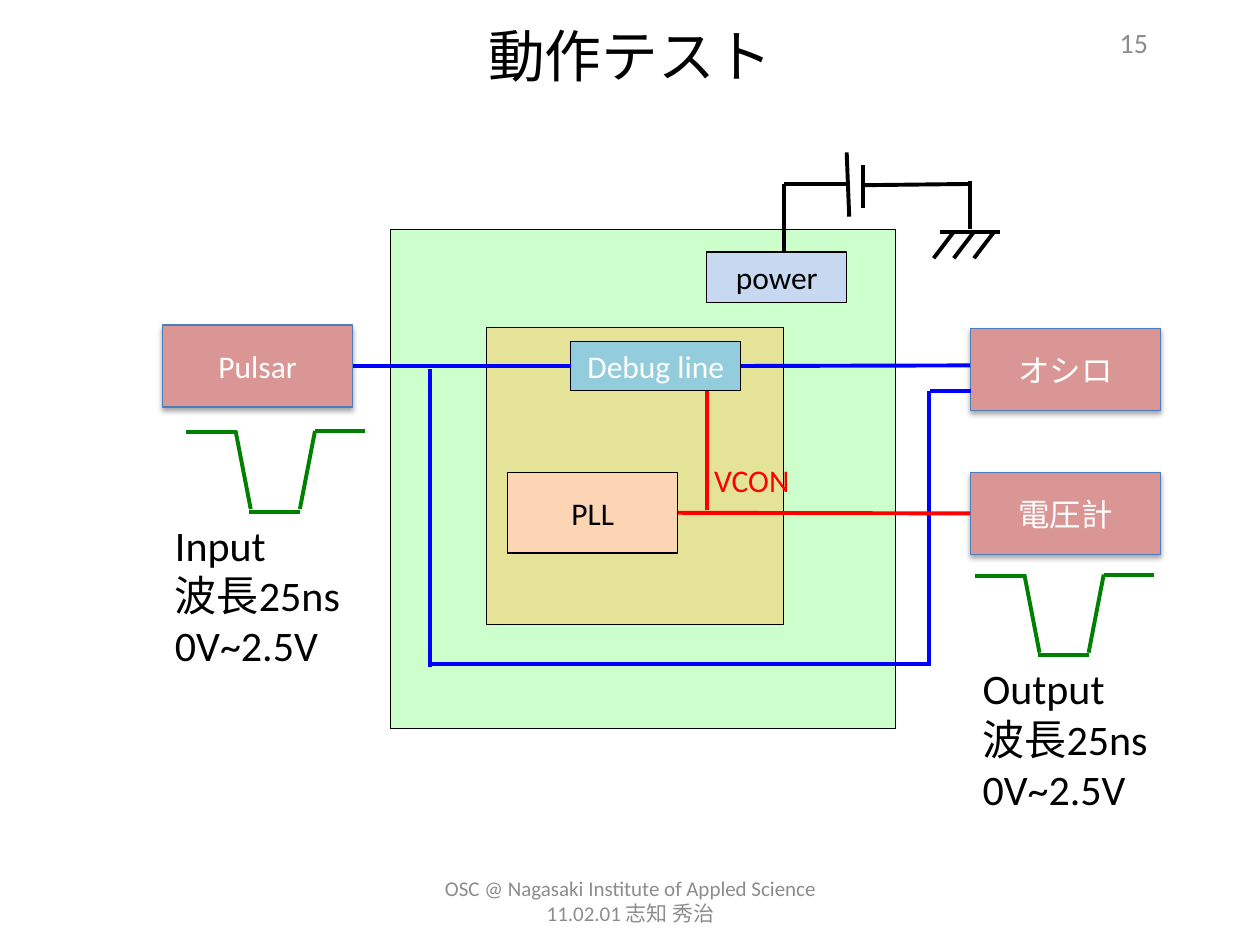
from typing import NamedTuple, Optional

from lxml import etree
from pptx import Presentation
from pptx.dml.color import RGBColor
from pptx.enum.shapes import MSO_CONNECTOR, MSO_SHAPE
from pptx.enum.text import MSO_ANCHOR, PP_ALIGN
from pptx.oxml.ns import qn
from pptx.util import Inches, Pt

RECTANGLE = MSO_SHAPE.RECTANGLE
STRAIGHT = MSO_CONNECTOR.STRAIGHT
TOP, MIDDLE = MSO_ANCHOR.TOP, MSO_ANCHOR.MIDDLE
LEFT, CENTER, RIGHT = PP_ALIGN.LEFT, PP_ALIGN.CENTER, PP_ALIGN.RIGHT
LEFT_SIDE, RIGHT_SIDE = 1, 3

FONT = "Calibri"
BLACK, WHITE, GRAY = "000000", "FFFFFF", "8C8C8C"
BLUE, RED, GREEN = "0000FF", "FF0000", "008000"


class Block(NamedTuple):
    left: float
    top: float
    width: float
    height: float
    fill: str
    label: str = ""
    label_color: str = BLACK
    outline: str = BLACK
    raised: bool = False


class Label(NamedTuple):
    left: float
    top: float
    width: float
    height: float
    lines: tuple[str, ...]
    size: float
    color: str = BLACK
    align: PP_ALIGN = LEFT
    anchor: MSO_ANCHOR = TOP
    wrap: bool = True


class Wire(NamedTuple):
    x1: float
    y1: float
    x2: float
    y2: float


def rgb(color: str) -> RGBColor:
    return RGBColor.from_string(color)


def write(frame, lines: tuple[str, ...], size: float, color: str, align: PP_ALIGN) -> None:
    for index, line in enumerate(lines):
        paragraph = frame.paragraphs[0] if index == 0 else frame.add_paragraph()
        paragraph.alignment = align
        run = paragraph.add_run()
        run.text = line
        run.font.name = FONT
        run.font.size = Pt(size)
        run.font.color.rgb = rgb(color)


def add_drop_shadow(shape) -> None:
    effects = shape._element.spPr.find(qn("a:effectLst"))
    shadow = etree.SubElement(
        effects, qn("a:outerShdw"), blurRad=str(Pt(3.1)), dist=str(Pt(1.8)),
        dir="5400000", rotWithShape="0")
    tint = etree.SubElement(shadow, qn("a:srgbClr"), val=BLACK)
    etree.SubElement(tint, qn("a:alpha"), val="35000")


def draw_block(slide, block: Block):
    shape = slide.shapes.add_shape(
        RECTANGLE, Inches(block.left), Inches(block.top),
        Inches(block.width), Inches(block.height))
    shape.shadow.inherit = False
    shape.fill.solid()
    shape.fill.fore_color.rgb = rgb(block.fill)
    shape.line.color.rgb = rgb(block.outline)
    shape.line.width = Pt(0.75)
    if block.raised:
        add_drop_shadow(shape)
    if block.label:
        shape.text_frame.vertical_anchor = MIDDLE
        write(shape.text_frame, (block.label,), 18, block.label_color, CENTER)
    return shape


def draw_label(slide, label: Label) -> None:
    box = slide.shapes.add_textbox(
        Inches(label.left), Inches(label.top), Inches(label.width), Inches(label.height))
    box.text_frame.word_wrap = label.wrap
    box.text_frame.vertical_anchor = label.anchor
    write(box.text_frame, label.lines, label.size, label.color, label.align)


def draw_wire(slide, wire: Wire, color: str, source: Optional[object] = None,
              target: Optional[object] = None) -> None:
    connector = slide.shapes.add_connector(
        STRAIGHT, Inches(wire.x1), Inches(wire.y1), Inches(wire.x2), Inches(wire.y2))
    connector.line.color.rgb = rgb(color)
    connector.line.width = Pt(2.25)
    etree.SubElement(connector._element.spPr, qn("a:effectLst"))
    if source is not None:
        connector.begin_connect(source, RIGHT_SIDE)
    if target is not None:
        connector.end_connect(target, LEFT_SIDE)


def draw_pulse(slide, left: float, top: float) -> None:
    for x1, y1, x2, y2 in PULSE:
        draw_wire(slide, Wire(left + x1, top + y1, left + x2, top + y2), GREEN)


def instrument(left: float, top: float, name: str) -> Block:
    return Block(left, top, 1.51, 0.65, "D99694", name, WHITE, "4B7EBC", True)


def signal_note(left: float, top: float, name: str) -> Label:
    return Label(left, top, 1.51, 1.31, (name, "波長25ns", "0V~2.5V"), 24)


BOARD = Block(3.1, 1.82, 4.01, 3.96, "CCFFCC")
CHIP = Block(3.86, 2.6, 2.36, 2.36, "E4E398")
DEBUG_LINE = Block(4.53, 2.71, 1.35, 0.39, "93CDDD", "Debug line", WHITE)
PLL = Block(4.03, 3.75, 1.35, 0.64, "FCD5B5", "PLL")
POWER = Block(5.61, 2, 1.11, 0.4, "C6D9F1", "power")
PULSAR = instrument(1.29, 2.58, "Pulsar")
OSCILLOSCOPE = instrument(7.7, 2.61, "オシロ")
VOLTMETER = instrument(7.7, 3.75, "電圧計")

BYPASS = (
    Wire(3.41, 2.93, 3.41, 5.29),
    Wire(3.41, 5.27, 7.39, 5.27),
    Wire(7.37, 5.27, 7.37, 3.1),
    Wire(7.38, 3.1, 7.71, 3.1),
)
BATTERY_AND_GROUND = (
    Wire(6.22, 2, 6.22, 1.46),
    Wire(6.22, 1.46, 6.72, 1.46),
    Wire(6.72, 1.21, 6.74, 1.72),
    Wire(6.85, 1.31, 6.85, 1.65),
    Wire(6.86, 1.47, 7.7, 1.46),
    Wire(7.7, 1.44, 7.7, 1.82),
    Wire(7.46, 1.84, 7.94, 1.84),
    *(Wire(x, 1.84, x - 0.16, 2.05) for x in (7.57, 7.73, 7.89)),
)
PULSE = (
    Wire(0, 0.01, 0.4, 0.01),
    Wire(0.39, 0, 0.51, 0.62),
    Wire(0.5, 0.64, 0.9, 0.64),
    Wire(0.9, 0.62, 1.02, 0),
    Wire(1.02, 0, 1.42, 0),
)
LABELS = (
    Label(0.5, 0.17, 9, 0.53, ("動作テスト",), 32.4, BLACK, CENTER, MIDDLE),
    Label(3.42, 6.95, 3.17, 0.4,
          ("OSC @ Nagasaki Institute of Appled Science 11.02.01 志知 秀治",),
          12, GRAY, CENTER, MIDDLE),
    Label(8.65, 0.05, 0.56, 0.57, ("15",), 16, GRAY, RIGHT, MIDDLE),
    Label(5.57, 3.61, 0.87, 0.4, ("VCON",), 18, RED, wrap=False),
    signal_note(1.29, 4.07, "Input"),
    signal_note(7.7, 5.21, "Output"),
)


def main() -> None:
    presentation = Presentation()
    presentation.slide_width = Inches(10)
    presentation.slide_height = Inches(7.5)
    slide = presentation.slides.add_slide(presentation.slide_layouts[6])

    for area in (BOARD, CHIP):
        draw_block(slide, area)
    debug_line, pll, _, pulsar, _, voltmeter = [
        draw_block(slide, block)
        for block in (DEBUG_LINE, PLL, POWER, PULSAR, OSCILLOSCOPE, VOLTMETER)]

    draw_wire(slide, Wire(2.8, 2.9, 4.53, 2.9), BLUE, pulsar, debug_line)
    draw_wire(slide, Wire(5.88, 2.9, 7.7, 2.9), BLUE, debug_line)
    for wire in BYPASS:
        draw_wire(slide, wire, BLUE)
    for wire in BATTERY_AND_GROUND:
        draw_wire(slide, wire, BLACK)
    draw_wire(slide, Wire(5.38, 4.07, 7.7, 4.07), RED, pll, voltmeter)
    draw_wire(slide, Wire(5.61, 4.05, 5.61, 3.1), RED)

    draw_pulse(slide, 1.48, 3.42)
    draw_pulse(slide, 7.74, 4.56)
    for label in LABELS:
        draw_label(slide, label)

    presentation.save("out.pptx")


if __name__ == "__main__":
    main()
